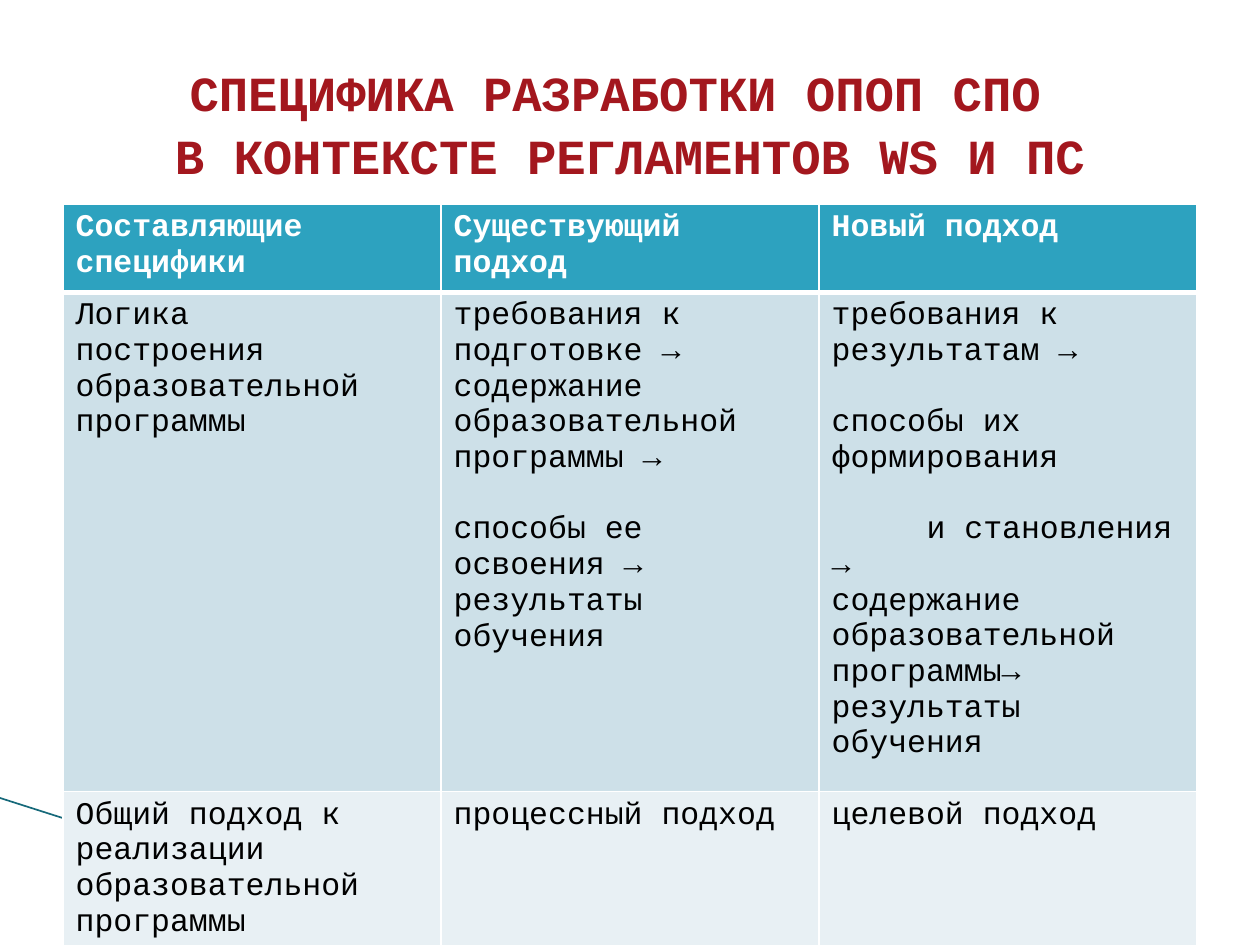
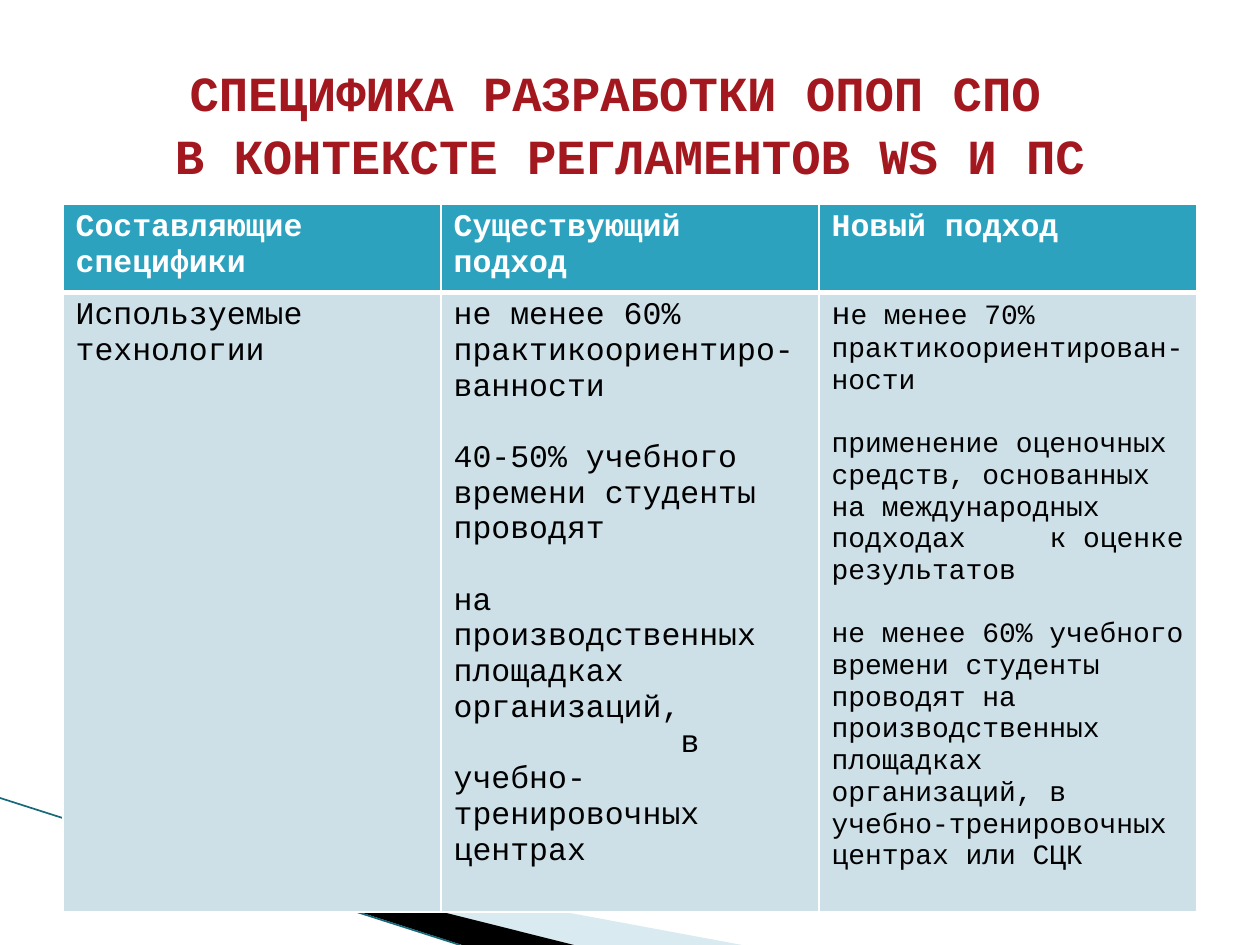
from dataclasses import dataclass

from lxml.etree import SubElement
from pptx import Presentation
from pptx.dml.color import RGBColor
from pptx.enum.shapes import MSO_CONNECTOR as CONN
from pptx.enum.text import MSO_ANCHOR as ANCHOR, PP_ALIGN as ALIGN
from pptx.oxml.ns import qn
from pptx.util import Emu, Pt


@dataclass(frozen=True)
class Theme:
    font: str = "Courier New"
    title: str = "A3171E"
    head: str = "2DA2BF"
    bands: tuple = ("CDE0E8", "E8F0F4")
    white: str = "FFFFFF"
    black: str = "000000"
    wedge: str = "A0CBDC"
    rule: str = "16697A"
    title_size: int = 28
    body_size: int = 18
    small_size: int = 16
    line_height: float = 1.13


T = Theme()


@dataclass
class Para:
    text: str
    size: int = T.body_size
    lead: str = ""       # opening letters set at body size
    gap: bool = False    # one line of space before
    indent: int = 0      # first line, px
    tab: int = 0         # tab stop, px


# Content
TITLE = "СПЕЦИФИКА РАЗРАБОТКИ ОПОП СПО \vВ КОНТЕКСТЕ РЕГЛАМЕНТОВ WS И ПС"
HEADER = ["Составляющие специфики", "Существующий подход", "Новый подход"]
SMALL = T.small_size
SLIDES = [
    [
        (476, [
            [Para("Логика"), Para("построения образовательной программы")],
            [Para("требования к подготовке → содержание образовательной программы →"),
             Para("способы ее освоения → результаты обучения", gap=True)],
            [Para("требования к результатам →"),
             Para("способы их формирования", gap=True),
             Para("и становления →", gap=True, indent=95),
             Para("содержание образовательной программы→ результаты обучения")],
        ]),
        (155, [
            [Para("Общий подход к реализации образовательной программы")],
            [Para("процессный подход")],
            [Para("целевой подход")],
        ]),
    ],
    [
        (620, [
            [Para("Используемые"), Para("технологии")],
            [Para("не менее 60% практикоориентиро-ванности"),
             Para("40-50% учебного времени студенты проводят", gap=True),
             Para("на производственных площадках организаций,", gap=True),
             Para("в учебно-тренировочных центрах", indent=227)],
            [Para("е менее 70% практикоориентирован-ности", SMALL, lead="н"),
             Para("применение оценочных средств, основанных на международных "
                  "подходах\tк оценке результатов", SMALL, gap=True, tab=218),
             Para("не менее 60% учебного времени студенты проводят на "
                  "производственных площадках организаций, в "
                  "учебно-тренировочных центрах или СЦК", SMALL, gap=True)],
        ]),
    ],
]

# Layout, px
WIDTH, HEIGHT = 1260, 945
MARGIN = 63
TITLE_TOP, TITLE_H = 43, 157
TABLE_TOP, HEAD_H = 204, 83
WEDGES = [
    (T.wedge, 40, [(69, 820), (742, HEIGHT), (574, HEIGHT)]),
    (T.black, 100, [(67, 818), (574, HEIGHT), (462, HEIGHT)]),
]
RULE = (0, 798, 460, HEIGHT)


def px(n):
    return Emu(round(n * 914400 / 126))


def rgb(value):
    return RGBColor.from_string(value)


def add_text(p, text, size=T.body_size, color=T.black, bold=False):
    for i, part in enumerate(text.split("\v")):
        if i:
            p.add_line_break()
        r = p.add_run()
        r.text = part
        r.font.name, r.font.size, r.font.bold = T.font, Pt(size), bold
        r.font.color.rgb = rgb(color)


def format_para(p, para):
    pPr = p._p.get_or_add_pPr()
    if para.indent:
        pPr.set("marL", "0")
        pPr.set("indent", str(px(para.indent)))
    if para.tab:
        tabs = SubElement(pPr, qn("a:tabLst"))
        SubElement(tabs, qn("a:tab"), pos=str(px(para.tab)), algn="l")
    if para.gap:
        p.space_before = Pt(round(para.size * T.line_height, 1))


def set_cell(cell, fill, top=1, bottom=1):
    tcPr = cell._tc.get_or_add_tcPr()
    for side, width in (("L", 1), ("R", 1), ("T", top), ("B", bottom)):
        ln = SubElement(tcPr, qn(f"a:ln{side}"), w=str(Pt(width)))
        SubElement(SubElement(ln, qn("a:solidFill")), qn("a:srgbClr"), val=T.white)
    cell.fill.solid()
    cell.fill.fore_color.rgb = rgb(fill)


def add_backdrop(slide):
    for color, alpha, points in WEDGES:
        (x, y), *rest = [(px(a), px(b)) for a, b in points]
        fb = slide.shapes.build_freeform(x, y)
        fb.add_line_segments(rest)
        sp = fb.convert_to_shape()
        sp.shadow.inherit = False
        sp.line.fill.background()
        sp.fill.solid()
        sp.fill.fore_color.rgb = rgb(color)
        if alpha < 100:
            clr = sp._element.spPr.find(qn("a:solidFill"))[0]
            SubElement(clr, qn("a:alpha"), val=str(alpha * 1000))
    line = slide.shapes.add_connector(CONN.STRAIGHT, *map(px, RULE))
    line.line.color.rgb = rgb(T.rule)
    line.line.width = Pt(0.95)
    SubElement(line._element.spPr, qn("a:effectLst"))


def add_title(slide):
    box = slide.shapes.add_textbox(px(MARGIN), px(TITLE_TOP),
                                   px(WIDTH - 2 * MARGIN), px(TITLE_H))
    tf = box.text_frame
    tf.word_wrap = True
    tf.vertical_anchor = ANCHOR.MIDDLE
    p = tf.paragraphs[0]
    p.alignment = ALIGN.CENTER
    p.line_spacing = 1.06
    add_text(p, TITLE, size=T.title_size, color=T.title, bold=True)


def add_approaches(slide, rows):
    heights = [HEAD_H] + [h for h, _ in rows]
    table = slide.shapes.add_table(
        len(heights), len(HEADER), px(MARGIN), px(TABLE_TOP),
        px(WIDTH - 2 * MARGIN), px(sum(heights))).table
    for row, h in zip(table.rows, heights):
        row.height = px(h)
    for c, label in enumerate(HEADER):
        cell = table.cell(0, c)
        set_cell(cell, T.head, bottom=3)
        add_text(cell.text_frame.paragraphs[0], label, color=T.white, bold=True)
    for i, (_, cells) in enumerate(rows):
        for c, paras in enumerate(cells):
            cell = table.cell(i + 1, c)
            set_cell(cell, T.bands[i % 2], top=1 if i else 3)
            tf = cell.text_frame
            for n, para in enumerate(paras):
                p = tf.add_paragraph() if n else tf.paragraphs[0]
                format_para(p, para)
                if para.lead:
                    add_text(p, para.lead)
                add_text(p, para.text, size=para.size)


def main():
    prs = Presentation()
    prs.slide_width, prs.slide_height = px(WIDTH), px(HEIGHT)
    for rows in SLIDES:
        slide = prs.slides.add_slide(prs.slide_layouts[6])
        add_backdrop(slide)
        add_title(slide)
        add_approaches(slide, rows)
    prs.save("out.pptx")


if __name__ == "__main__":
    main()
